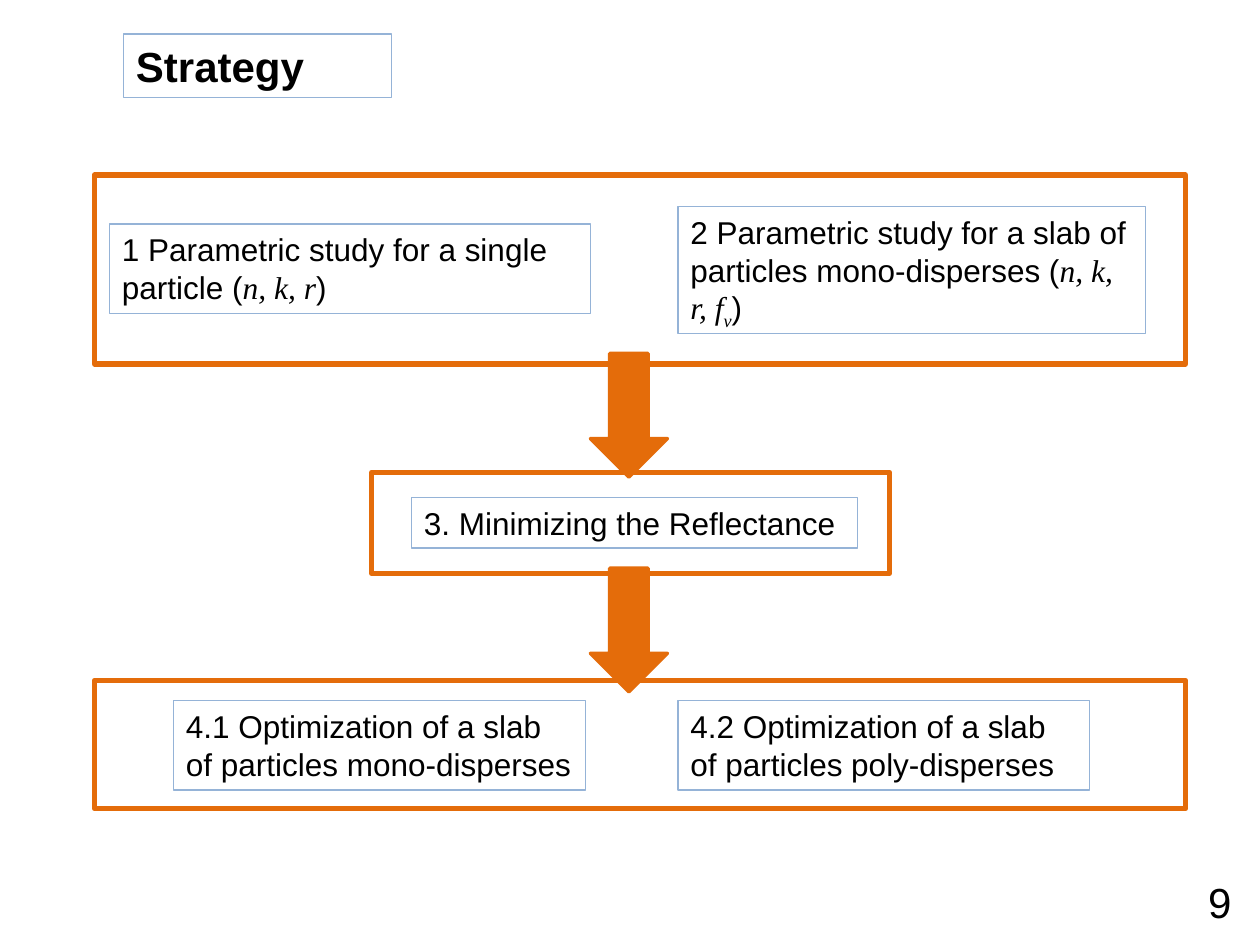
from pptx import Presentation
from pptx.dml.color import RGBColor
from pptx.enum.shapes import MSO_SHAPE as Preset
from pptx.enum.text import MSO_ANCHOR as Anchor, MSO_AUTO_SIZE as AutoSize, PP_ALIGN as Align
from pptx.util import Pt

ORANGE, BLUE, BLACK = "E46C0A", "95B3D7", "000000"
SANS, SERIF = "Arial", "Times New Roman"

WIDE_LEFT, WIDE_WIDTH = 54, 623.5
RIGHT_COLUMN = 387.4
GOAL_TOP, GOAL_HEIGHT = 397.4 + 3, 51.1
ARROW_LEFT, ARROW_WIDTH, ARROW_HEIGHT = 337.4, 44, 70.6

FRAMES = [
    (WIDE_LEFT, 100, WIDE_WIDTH, 108),
    (212.4, 270, 296, 57.6),
    (WIDE_LEFT, 388.8, WIDE_WIDTH, 73.4),
]
ARROW_TOPS = [202, 324.7]

LABELS = [
    ((70.6, 19.4, 153.2, 36.4), 24, [("Strategy", "bold")]),
    ((62.6, 128, 275, 51), 18, [
        ("1 Parametric study for a single particle (", ""),
        ("n, k, r", "math"),
        (")", ""),
    ]),
    ((RIGHT_COLUMN, 118, 267, 72.7), 18, [
        ("2 Parametric study for a slab of particles mono-disperses (", ""),
        ("n, k, r, f", "math"),
        ("v", "subscript"),
        (")", ""),
    ]),
    ((235.2, 284.2, 255, 29), 18, [("3. Minimizing the Reflectance", "")]),
    ((99.2, GOAL_TOP, 235.4, GOAL_HEIGHT), 18,
     [("4.1 Optimization of a slab of particles mono-disperses", "")]),
    ((RIGHT_COLUMN, GOAL_TOP, 235.4, GOAL_HEIGHT), 18,
     [("4.2 Optimization of a slab of particles poly-disperses", "")]),
]
PAGE_NUMBER = ((683.3, 497.5, 28, 36.4), 24, [("9", "")])


def color(value):
    return RGBColor.from_string(value)


def add_outline(slide, preset, place, line_color, line_width, fill=None):
    shape = slide.shapes.add_shape(preset, *map(Pt, place))
    shape.shadow.inherit = False
    shape.line.color.rgb = color(line_color)
    shape.line.width = Pt(line_width)
    if fill:
        shape.fill.solid()
        shape.fill.fore_color.rgb = color(fill)
    else:
        shape.fill.background()
    return shape


def write(box, size, runs, wrap=True):
    frame = box.text_frame
    frame.word_wrap = wrap
    frame.auto_size = AutoSize.SHAPE_TO_FIT_TEXT
    frame.vertical_anchor = Anchor.TOP
    para = frame.paragraphs[0]
    para.alignment = Align.LEFT
    for text, style in runs:
        span = para.add_run()
        span.text = text
        font = span.font
        math = style in ("math", "subscript")
        font.name = SERIF if math else SANS
        font.size = Pt(size)
        font.bold = style == "bold"
        font.italic = math
        font.color.rgb = color(BLACK)
        if style == "subscript":
            span._r.get_or_add_rPr().set("baseline", "-25000")


def main():
    deck = Presentation()
    deck.slide_width, deck.slide_height = Pt(720), Pt(540)
    page = deck.slides.add_slide(deck.slide_layouts[6])

    for place in FRAMES:
        add_outline(page, Preset.RECTANGLE, place, ORANGE, 3)
    for place, size, runs in LABELS:
        write(add_outline(page, Preset.RECTANGLE, place, BLUE, 0.75), size, runs)
    for top in ARROW_TOPS:
        place = (ARROW_LEFT, top, ARROW_WIDTH, ARROW_HEIGHT)
        add_outline(page, Preset.DOWN_ARROW, place, ORANGE, 2, fill=ORANGE)

    place, size, runs = PAGE_NUMBER
    write(page.shapes.add_textbox(*map(Pt, place)), size, runs, wrap=False)
    deck.save("out.pptx")


if __name__ == "__main__":
    main()
